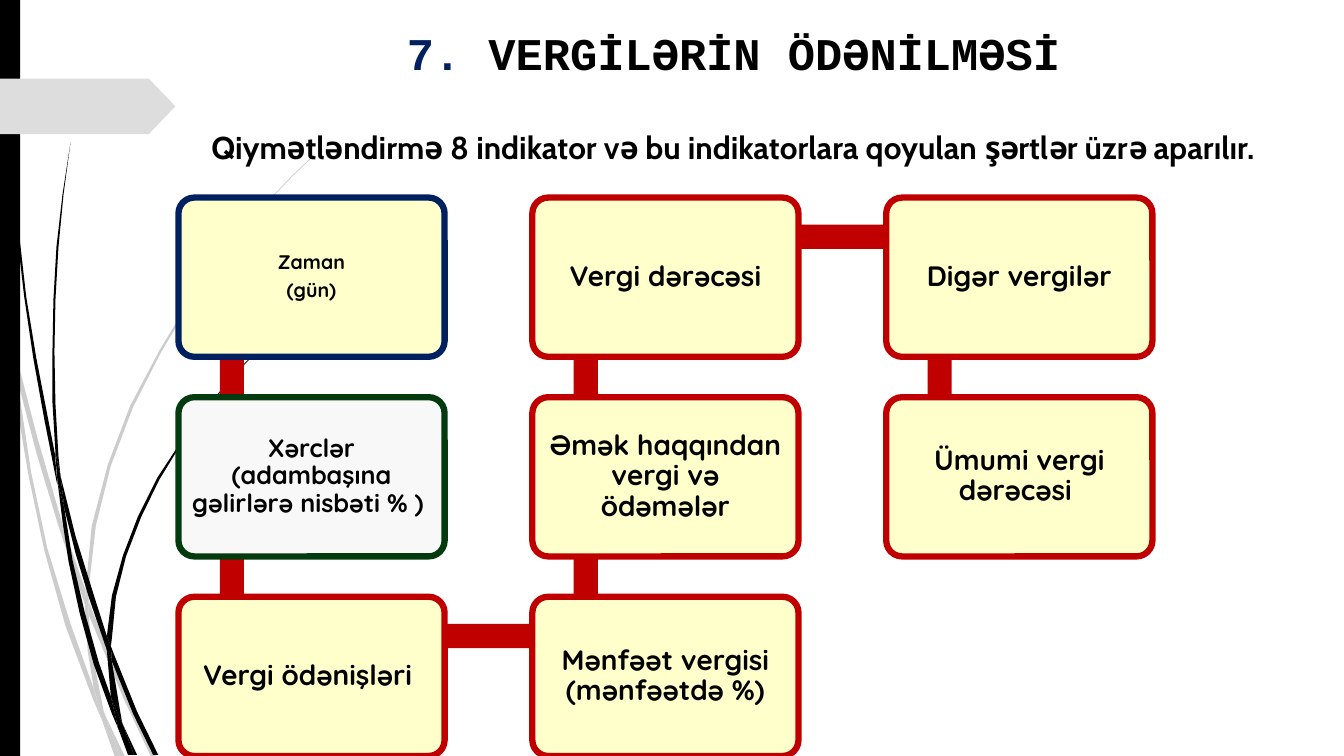
from itertools import pairwise

from pptx import Presentation
from pptx.dml.color import RGBColor
from pptx.enum.shapes import MSO_SHAPE
from pptx.enum.text import MSO_ANCHOR, PP_ALIGN
from pptx.util import Pt

PX = 9144
SLIDE_W, SLIDE_H = 1333, 750
RECT, ROUNDED, PENTAGON = MSO_SHAPE.RECTANGLE, MSO_SHAPE.ROUNDED_RECTANGLE, MSO_SHAPE.PENTAGON
CENTER, TOP, MIDDLE = PP_ALIGN.CENTER, MSO_ANCHOR.TOP, MSO_ANCHOR.MIDDLE

BLACK = RGBColor(0x00, 0x00, 0x00)
SWIRL_GREY = RGBColor(0xCC, 0xCC, 0xCC)
TAB_GREY = RGBColor(0xDD, 0xDD, 0xDD)
NAVY = RGBColor(0x00, 0x20, 0x60)
GREEN = RGBColor(0x03, 0x3B, 0x0E)
RED = RGBColor(0xC0, 0x00, 0x00)
CREAM = RGBColor(0xFF, 0xFF, 0xCC)
OFF_WHITE = RGBColor(0xF8, 0xF8, 0xF8)

GREY_STRANDS = [
    [(11, 350), (9, 322), (0, 282), (0, 299), (10, 344)],
    [(58, 522), (84, 599), (85, 586), (62, 520), (37, 434), (14, 345), (17, 376), (36, 449)],
    [(92, 607), (88, 596), (88, 610), (123, 694), (150, 751), (155, 751), (127, 692)],
    [(119, 751), (124, 751), (105, 711)],
    [(93, 683), (70, 619), (47, 544), (31, 469), (17, 376), (11, 350), (18, 410), (28, 470),
     (44, 546), (65, 621), (92, 693), (101, 714), (99, 707)],
    [(84, 599), (87, 646), (93, 683), (96, 692), (105, 711), (103, 706), (91, 646), (88, 610),
     (88, 608)],
    [(88, 584), (95, 522), (110, 462), (132, 404), (160, 349), (192, 296), (229, 245),
     (268, 198), (290, 175), (312, 154), (312, 153), (289, 175), (268, 197), (228, 244),
     (190, 295), (158, 348), (129, 403), (107, 461), (91, 522), (85, 584), (85, 586),
     (88, 596)],
    [(101, 714), (114, 751), (119, 751)],
    [(88, 608), (88, 610), (88, 596), (85, 586), (84, 599)],
    [(96, 692), (93, 683), (99, 707), (101, 714), (119, 751), (105, 711)],
]
BLACK_STRANDS = [
    [(7, 110), (17, 233), (24, 294), (33, 355), (44, 416), (56, 477), (57, 481), (55, 457),
     (55, 453), (36, 355), (26, 294), (19, 232), (8, 109), (5, 48), (4, 0), (3, 0), (4, 48)],
    [(88, 592), (106, 645), (106, 631), (93, 590), (75, 532), (60, 472), (64, 505), (75, 549)],
    [(113, 649), (110, 641), (111, 656), (132, 708), (152, 749), (157, 749), (136, 706)],
    [(110, 691), (98, 657), (84, 607), (72, 556), (64, 505), (57, 477), (62, 517), (68, 557),
     (79, 608), (93, 659), (111, 708), (117, 722), (116, 717)],
    [(60, 472), (58, 453), (55, 401), (54, 349), (55, 297), (58, 245), (63, 193), (70, 141),
     (62, 193), (56, 245), (53, 297), (52, 349), (52, 399), (55, 449)],
    [(133, 749), (136, 749), (122, 719)],
    [(57, 477), (64, 505), (60, 472), (55, 449), (55, 453)],
    [(111, 633), (115, 592), (125, 552), (140, 513), (158, 476), (180, 440), (205, 406),
     (231, 374), (245, 359), (261, 344), (260, 344), (245, 358), (231, 373), (204, 405),
     (179, 439), (156, 474), (137, 512), (122, 551), (111, 591), (106, 631), (110, 641)],
    [(117, 722), (127, 749), (131, 749)],
    [(106, 645), (110, 691), (116, 706), (122, 719), (121, 716), (111, 656), (109, 651)],
    [(106, 645), (109, 651), (111, 656), (110, 641), (106, 631)],
    [(116, 706), (110, 691), (116, 717), (117, 722), (130, 749), (133, 749), (122, 719)],
]

INDICATORS = [
    (0, 0, ["Zaman", "(gün)"], 14, CREAM, NAVY),
    (0, 1, ["Xərclər (adambaşına gəlirlərə nisbəti % ) "], 18, OFF_WHITE, GREEN),
    (0, 2, ["Vergi ödənişləri "], 20, CREAM, RED),
    (1, 2, ["Mənfəət vergisi (mənfəətdə %)"], 20, CREAM, RED),
    (1, 1, ["Əmək haqqından vergi və ödəmələr"], 20, CREAM, RED),
    (1, 0, ["Vergi dərəcəsi"], 20, CREAM, RED),
    (2, 0, ["Digər vergilər"], 20, CREAM, RED),
    (2, 1, ["Ümumi vergi dərəcəsi "], 20, CREAM, RED),
]
CARD_W, CARD_H = 264, 158
COLUMN_STEP, ROW_STEP = 351, 198
BAR_X, BAR_Y, BAR_THICKNESS = 53, 39, 24


def paint(shape, fill, line=None):
    """Give a shape a flat fill and an optional outline."""
    shape.shadow.inherit = False
    shape.fill.solid()
    shape.fill.fore_color.rgb = fill
    if line is None:
        shape.line.fill.background()
    else:
        shape.line.color.rgb = line
        shape.line.width = Pt(4.5)


def add_block(slide, kind, box, fill, line=None):
    """Add a painted preset shape in a pixel box."""
    block = slide.shapes.add_shape(kind, *(v * PX for v in box))
    paint(block, fill, line)
    return block


def draw_swirls(slide, left, top, strands, color):
    """Draw the tapering strands from the given corner."""
    for strand in strands:
        outline = [(left + x, top + y) for x, y in strand]
        builder = slide.shapes.build_freeform(*outline[0], scale=PX)
        builder.add_line_segments(outline[1:], close=True)
        paint(builder.convert_to_shape(), color)


def draw_side_decor(slide, left, top):
    """Draw the swirls, the black edge and the grey tab."""
    draw_swirls(slide, left, top, GREY_STRANDS, SWIRL_GREY)
    draw_swirls(slide, left, top, BLACK_STRANDS, BLACK)
    add_block(slide, RECT, (left, top, 20, SLIDE_H), BLACK)
    tab = add_block(slide, PENTAGON, (left, top + 78, 174, 55), TAB_GREY)
    tab.adjustments[0] = 0.48


def draw_heading(slide, box, runs, font_name, size):
    """Write one centred bold line made of coloured runs."""
    heading = slide.shapes.add_textbox(*(v * PX for v in box)).text_frame
    heading.word_wrap = True
    heading.vertical_anchor = TOP
    line = heading.paragraphs[0]
    line.alignment = CENTER
    line.font.name, line.font.size, line.font.bold = font_name, Pt(size), True
    for words, color in runs:
        run = line.add_run()
        run.text = words
        run.font.color.rgb = color


def draw_card(slide, left, top, lines, size, fill, border):
    """Draw one rounded indicator card with its label."""
    card = add_block(slide, ROUNDED, (left, top, CARD_W, CARD_H), fill, border)
    card.adjustments[0] = 0.1
    label = card.text_frame
    label.word_wrap = True
    label.vertical_anchor = MIDDLE
    inset = round(size * 0.4) * PX
    label.margin_left = label.margin_right = label.margin_top = label.margin_bottom = inset
    label.text = "\n".join(lines)
    for line in label.paragraphs:
        line.alignment = CENTER
        line.line_spacing = 0.9
        line.space_after = Pt(size * 0.35)
        line.font.name, line.font.size, line.font.bold = "Quicksand", Pt(size), True
        line.font.color.rgb = BLACK


def draw_indicator_chain(slide, left, top):
    """Draw the linked cards in their winding order."""
    corners = [(left + column * COLUMN_STEP, top + row * ROW_STEP)
               for column, row, *_ in INDICATORS]
    for (x1, y1), (x2, y2) in pairwise(corners):
        x, y = min(x1, x2) + BAR_X, min(y1, y2) + BAR_Y
        half = BAR_THICKNESS // 2
        if x1 == x2:
            bar = (x - half, y, BAR_THICKNESS, ROW_STEP)
        else:
            bar = (x, y - half, COLUMN_STEP, BAR_THICKNESS)
        add_block(slide, RECT, bar, RED)
    for corner, (_, _, *content) in zip(corners, INDICATORS):
        draw_card(slide, *corner, *content)


def main():
    """Build and save the tax indicator slide."""
    deck = Presentation()
    deck.slide_width, deck.slide_height = SLIDE_W * PX, SLIDE_H * PX
    slide = deck.slides.add_slide(deck.slide_layouts[6])
    draw_side_decor(slide, 0, 0)
    draw_heading(slide, (183, 20, 1089, 73),
                 [("7. ", NAVY), ("VERGİLƏRİN ÖDƏNİLMƏSİ", BLACK)], "Courier New", 32.4)
    draw_heading(slide, (183, 122, 1089, 73),
                 [("Qiymətləndirmə 8 indikator və bu indikatorlara qoyulan şərtlər üzrə aparılır.",
                   BLACK)], "Cabin", 22.5)
    draw_indicator_chain(slide, 177, 196)
    deck.save("out.pptx")


if __name__ == "__main__":
    main()
